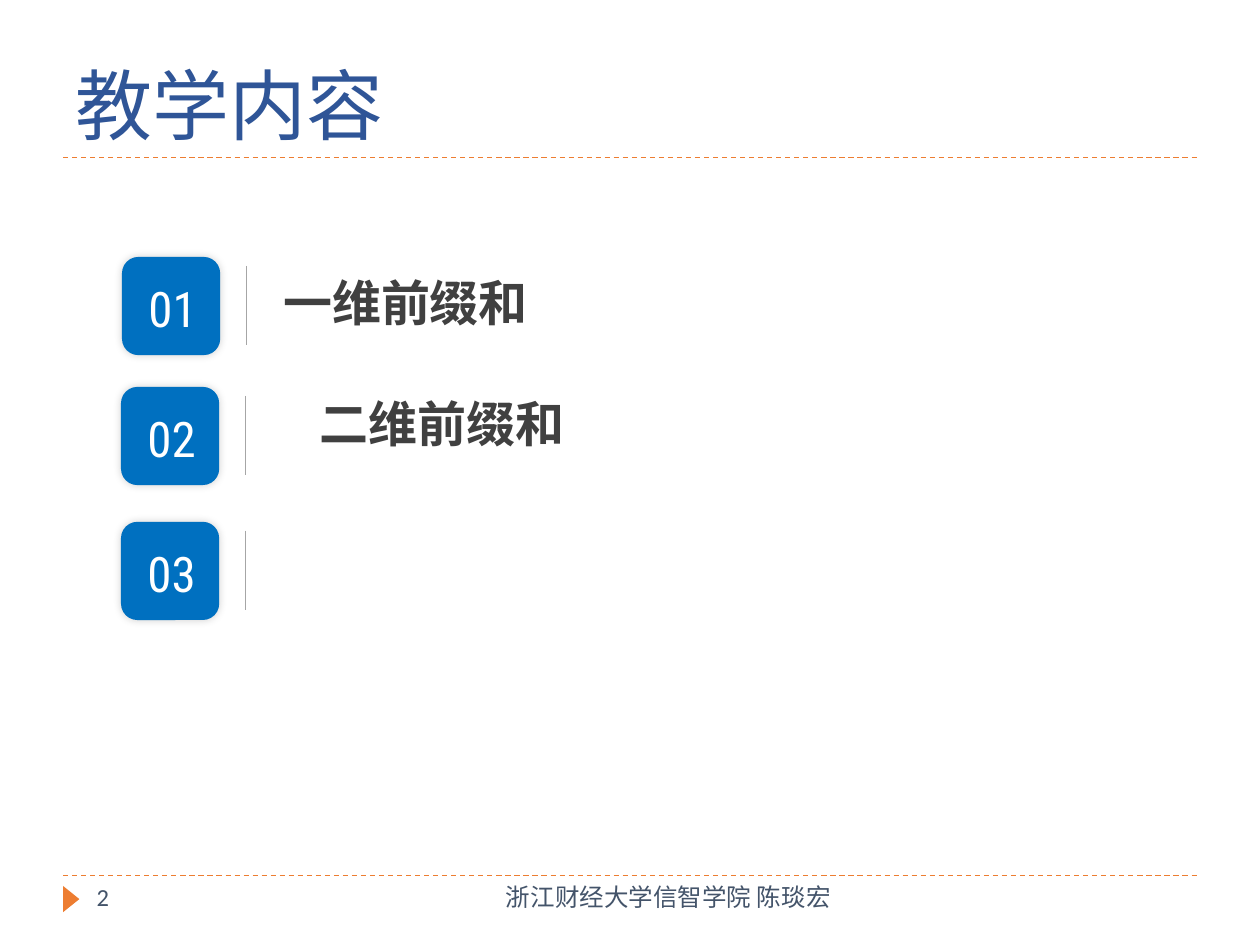
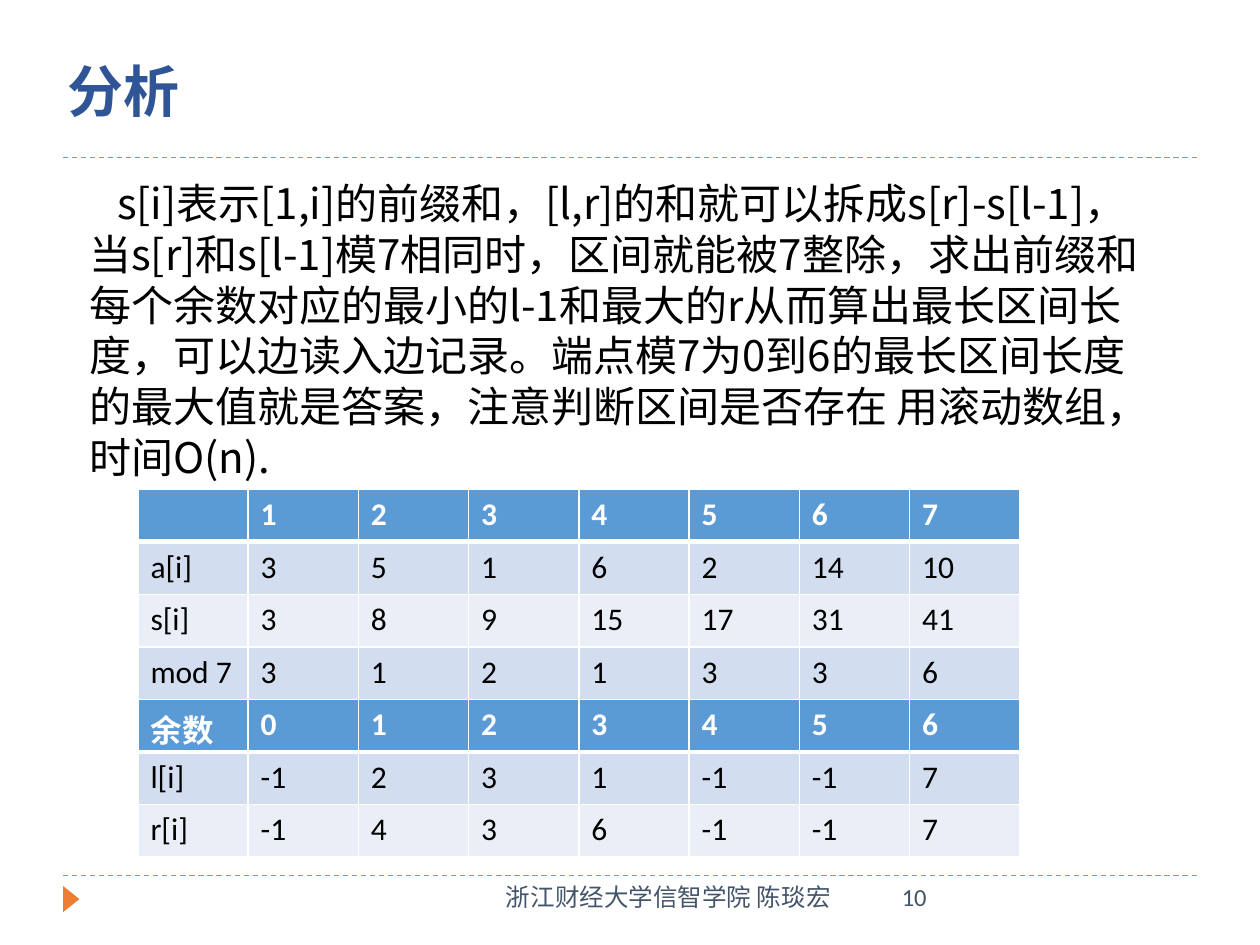
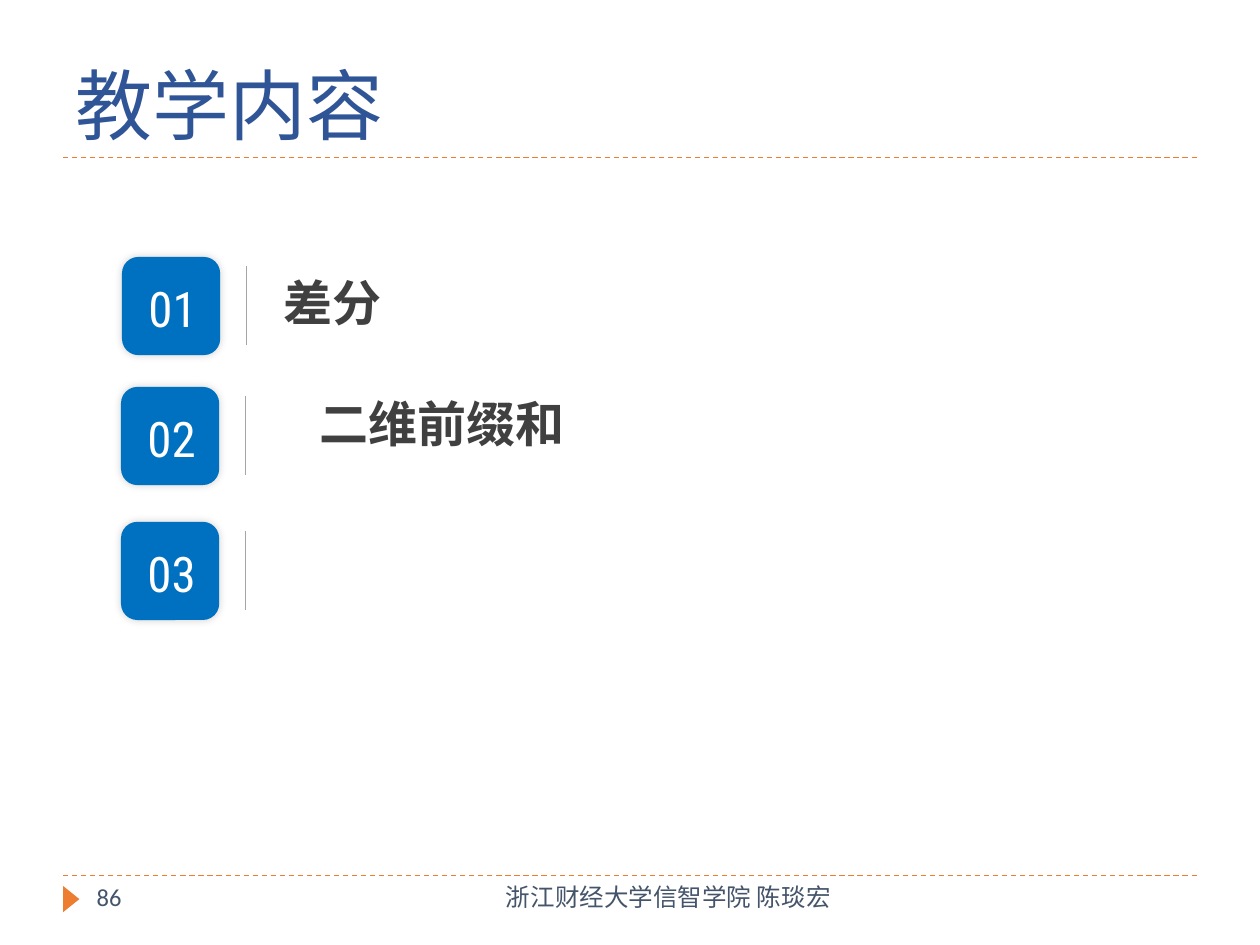
from lxml import etree
from pptx import Presentation, util as u
from pptx.dml import color as dml
from pptx.enum import dml as line_styles, shapes, text
from pptx.oxml import ns

ACCENT, TITLE, FOOTER, BADGE = "ED7D31", "2F5597", "44546A", "0070C0"
HEADING, DIVIDER, WHITE, BLACK = "404040", "A6A6A6", "FFFFFF", "000000"
HEADER_ROW, ODD_ROW, EVEN_ROW = "5B9BD5", "D2DEEF", "EAEFF7"
CJK_FONT = "Noto Sans CJK SC"


def rgb(hex_colour):
    return dml.RGBColor.from_string(hex_colour)


def write(frame, words, size=14, colour=FOOTER, font="Calibri", bold=False,
          align=text.PP_ALIGN.LEFT, anchor=text.MSO_ANCHOR.TOP, spacing=1.0, indent=0):
    frame.word_wrap = True
    frame.vertical_anchor = anchor
    paragraph = frame.paragraphs[0]
    paragraph.alignment = align
    paragraph.line_spacing = spacing
    if indent:
        paragraph._p.get_or_add_pPr().set("indent", str(u.Cm(indent)))
    run = paragraph.add_run()
    run.text = words
    run.font.size, run.font.name, run.font.bold = u.Pt(size), font, bold
    run.font.color.rgb = rgb(colour)
    if font == CJK_FONT:
        etree.SubElement(run._r.get_or_add_rPr(), ns.qn("a:ea"), typeface=font)


deck = Presentation()
deck.slide_width, deck.slide_height = u.Cm(25.4), u.Cm(19.05)
contents, analysis, later_contents = [
    deck.slides.add_slide(deck.slide_layouts[6]) for _ in range(3)]
lines = []  # slide, x1, y1, x2, y2, colour, width, dashed

# Title, rules and footer of every slide
contents_title = dict(words="教学内容", size=44, anchor=text.MSO_ANCHOR.BOTTOM)
analysis_title = dict(words="分析", size=32, bold=True, anchor=text.MSO_ANCHOR.MIDDLE)
title_area, analysis_area = (1.27, 0.43, 22.86, 2.74), (1.12, 0.58, 6.76, 2.64)
for slide, area, title, page, page_x in [
        (contents, title_area, contents_title, "2", 1.7),
        (analysis, analysis_area, analysis_title, "10", 17.93),
        (later_contents, title_area, contents_title, "86", 1.7)]:
    for y in (17.65, 3.18):
        lines.append((slide, 1.27, y, 24.13, y, ACCENT, 0.75, True))
    marker = slide.shapes.add_shape(shapes.MSO_SHAPE.ISOSCELES_TRIANGLE,
                                    u.Cm(1.17), u.Cm(17.96), u.Cm(0.53), u.Cm(0.33))
    marker.rotation = 90
    marker.shadow.inherit = False
    marker.fill.solid()
    marker.fill.fore_color.rgb = rgb(ACCENT)
    marker.line.fill.background()
    title_box = slide.shapes.add_textbox(*map(u.Cm, area))
    write(title_box.text_frame, colour=TITLE, spacing=0.9, **title)
    page_box = slide.shapes.add_textbox(*map(u.Cm, (page_x, 17.65, 5.5, 1.02)))
    write(page_box.text_frame, page)
    author_box = slide.shapes.add_textbox(*map(u.Cm, (8.41, 17.65, 8.59, 1.02)))
    write(author_box.text_frame, "浙江财经大学信智学院 陈琰宏", align=text.PP_ALIGN.RIGHT)

# Contents: numbered badges with dividers and topics
for slide, first_topic in [(contents, "一维前缀和"), (later_contents, "差分")]:
    for number, x, y in [("01", 2.46, 5.18), ("02", 2.44, 7.8), ("03", 2.44, 10.52)]:
        badge = slide.shapes.add_shape(shapes.MSO_SHAPE.ROUNDED_RECTANGLE,
                                       *map(u.Cm, (x, y, 1.98, 1.98)))
        badge.fill.solid()
        badge.fill.fore_color.rgb = rgb(BADGE)
        badge.line.fill.background()
        badge.shadow.inherit = False
        glow = etree.SubElement(badge._element.spPr.find(ns.qn("a:effectLst")),
                                ns.qn("a:outerShdw"), blurRad=str(u.Pt(5)), dist="0",
                                algn="ctr", rotWithShape="0")
        shade = etree.SubElement(glow, ns.qn("a:srgbClr"), val=BLACK)
        etree.SubElement(shade, ns.qn("a:alpha"), val="19000")
        number_box = slide.shapes.add_textbox(*map(u.Cm, (x + 0.03, y + 0.31, 1.98, 1.45)))
        write(number_box.text_frame, number, size=28, colour=WHITE,
              font="Roboto Condensed", align=text.PP_ALIGN.CENTER)
        lines.append((slide, x + 2.51, y + 0.18, x + 2.51, y + 1.78, DIVIDER, 1, False))
    for topic, x, y, width in [(first_topic, 5.46, 5.36, 18.29),
                               ("二维前缀和", 6.2, 7.8, 16.79)]:
        topic_box = slide.shapes.add_textbox(*map(u.Cm, (x, y, width, 1.45)))
        write(topic_box.text_frame, topic, size=28, colour=HEADING, font=CJK_FONT,
              bold=True, spacing=u.Pt(34))

# Analysis: explanation
explanation = analysis.shapes.add_textbox(*map(u.Cm, (1.55, 3.45, 22.1, 6.4)))
write(explanation.text_frame,
      "s[i]表示[1,i]的前缀和，[l,r]的和就可以拆成s[r]-s[l-1]，当s[r]和s[l-1]模7相同时，"
      "区间就能被7整除，求出前缀和每个余数对应的最小的l-1和最大的r从而算出最长区间长度，"
      "可以边读入边记录。端点模7为0到6的最长区间长度的最大值就是答案，"
      "注意判断区间是否存在 用滚动数组，时间O(n).",
      size=24, colour=BLACK, font=CJK_FONT, spacing=u.Pt(29), indent=0.56)

# Analysis: prefix sums, then first and last position of each remainder
prefix_sums = [
    ["", "1", "2", "3", "4", "5", "6", "7"],
    ["a[i]", "3", "5", "1", "6", "2", "14", "10"],
    ["s[i]", "3", "8", "9", "15", "17", "31", "41"],
    ["mod 7", "3", "1", "2", "1", "3", "3", "6"],
]
remainders = [
    ["余数", "0", "1", "2", "3", "4", "5", "6"],
    ["l[i]", "-1", "2", "3", "1", "-1", "-1", "7"],
    ["r[i]", "-1", "4", "3", "6", "-1", "-1", "7"],
]
for top, rows in [(9.86, prefix_sums), (14.1, remainders)]:
    grid = analysis.shapes.add_table(len(rows), len(rows[0]), u.Cm(2.78), u.Cm(top),
                                     u.Cm(17.78), u.Cm(1.06 * len(rows))).table
    for r, row in enumerate(rows):
        row_fill = HEADER_ROW if r == 0 else (ODD_ROW if r % 2 else EVEN_ROW)
        for c, value in enumerate(row):
            cell = grid.cell(r, c)
            borders = {"L": 1, "R": 1, "T": 3 if r == 1 else 1, "B": 3 if r == 0 else 1}
            for side, width in borders.items():
                border = etree.SubElement(cell._tc.get_or_add_tcPr(),
                                          ns.qn("a:ln" + side), w=str(u.Pt(width)))
                paint = etree.SubElement(border, ns.qn("a:solidFill"))
                etree.SubElement(paint, ns.qn("a:srgbClr"), val=WHITE)
            cell.fill.solid()
            cell.fill.fore_color.rgb = rgb(row_fill)
            if value:
                write(cell.text_frame, value, size=18, bold=r == 0,
                      colour=BLACK if r else WHITE)

# Rules and dividers
for slide, x1, y1, x2, y2, colour, width, dashed in lines:
    rule = slide.shapes.add_connector(shapes.MSO_CONNECTOR.STRAIGHT,
                                      *map(u.Cm, (x1, y1, x2, y2)))
    rule.line.color.rgb = rgb(colour)
    rule.line.width = u.Pt(width)
    if dashed:
        rule.line.dash_style = line_styles.MSO_LINE.DASH
    etree.SubElement(rule._element.spPr, ns.qn("a:effectLst"))

deck.save("out.pptx")
